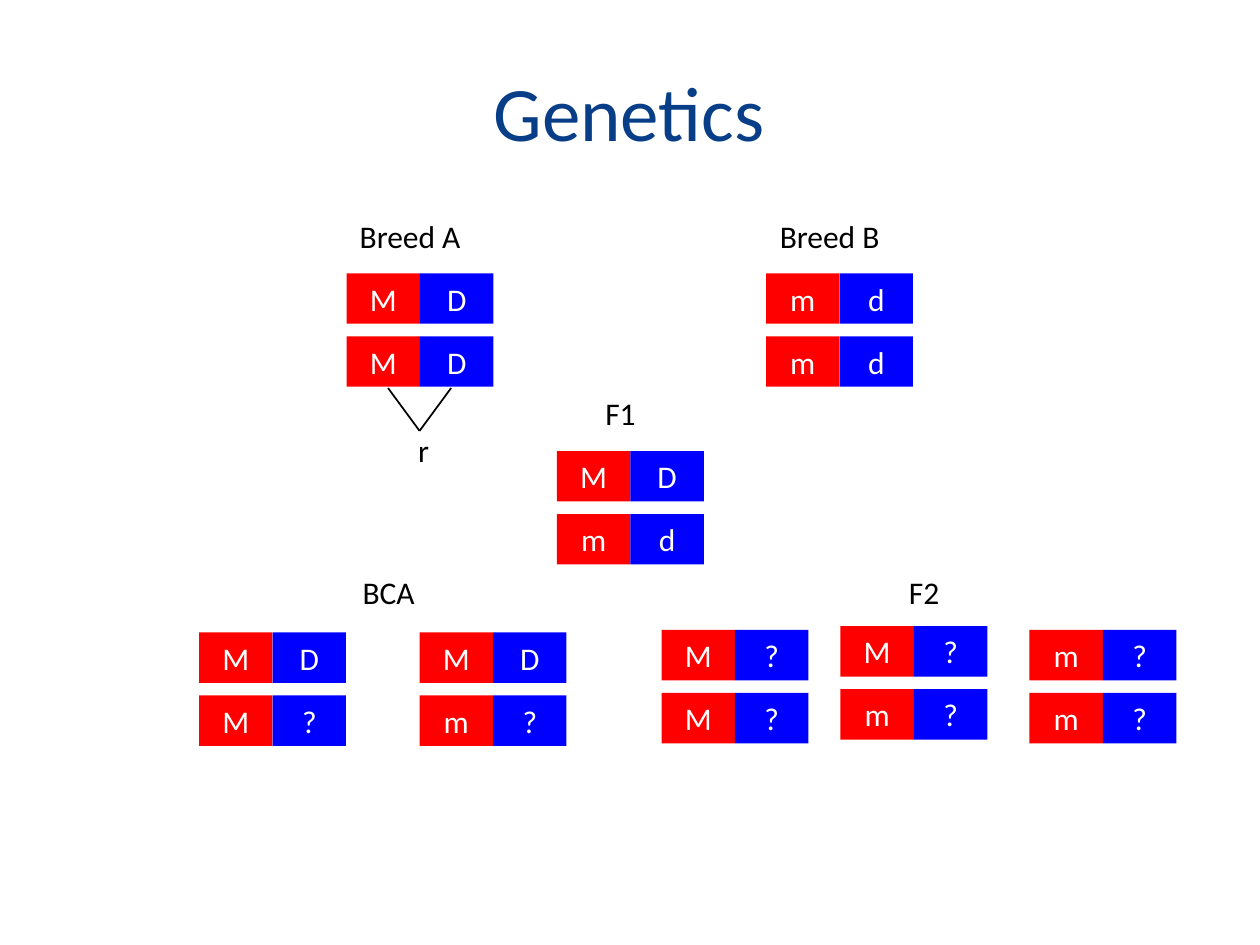
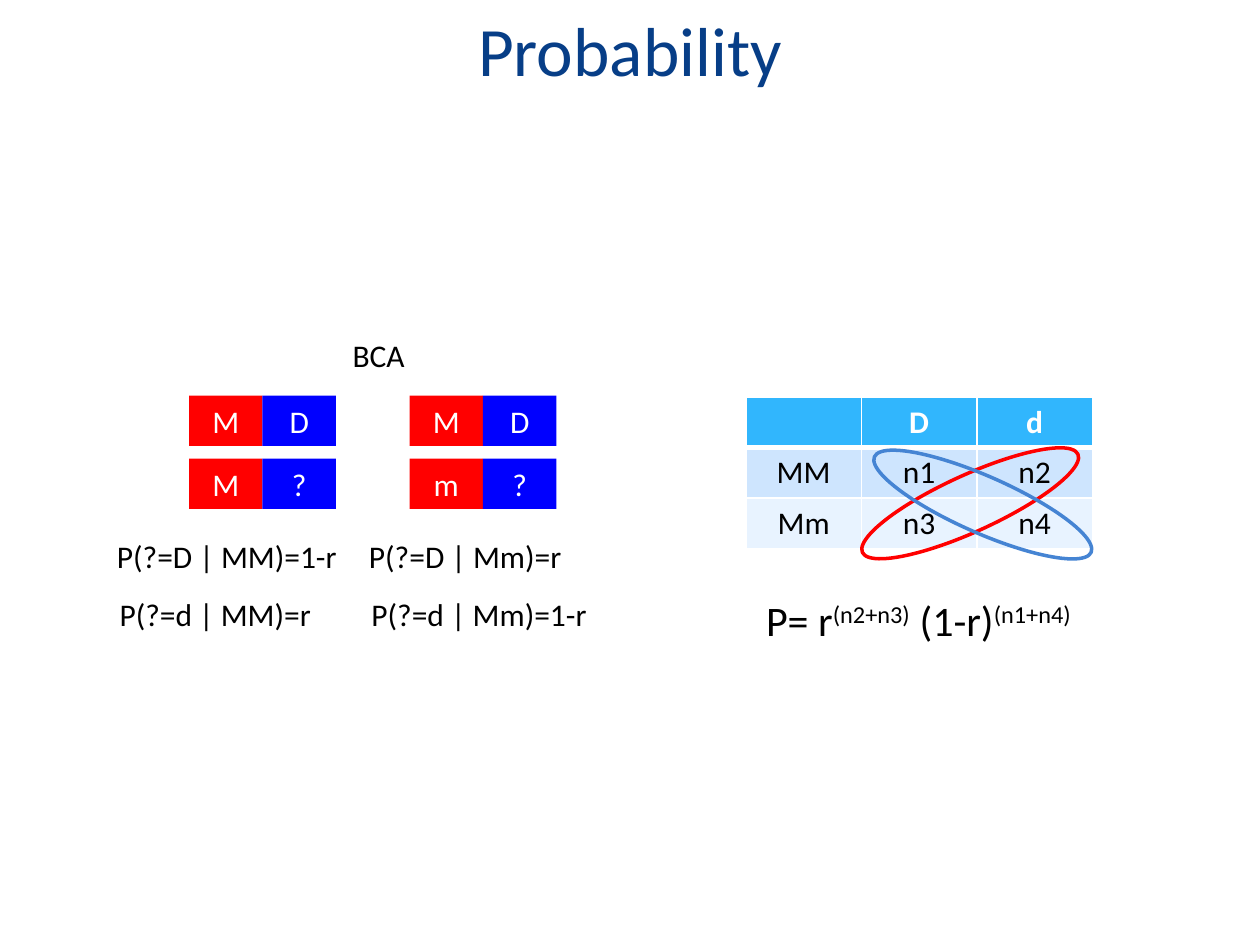
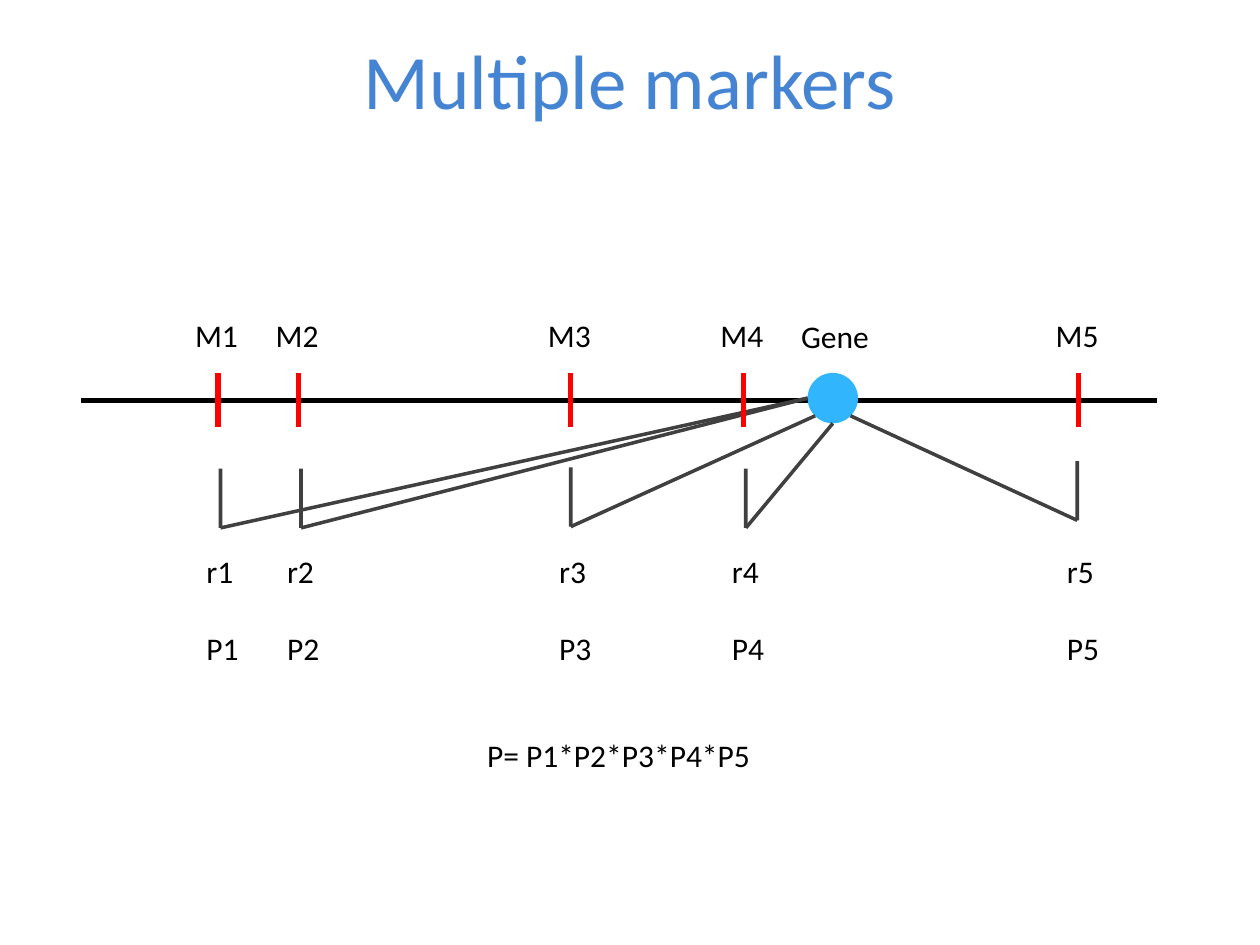
from lxml.etree import SubElement
from pptx import Presentation
from pptx.dml.color import RGBColor
from pptx.enum.shapes import MSO_CONNECTOR, MSO_SHAPE
from pptx.enum.text import MSO_ANCHOR, PP_ALIGN
from pptx.oxml.ns import qn
from pptx.util import Inches, Pt

FONT = "Calibri"
NAVY = RGBColor(0x07, 0x3E, 0x87)
STEEL = RGBColor(0x45, 0x84, 0xD3)
SKY = RGBColor(0x31, 0xB6, 0xFD)
PALE = RGBColor(0xCE, 0xE5, 0xFE)
PALEST = RGBColor(0xE8, 0xF3, 0xFF)
RED = RGBColor(0xFF, 0x00, 0x00)
BLUE = RGBColor(0x00, 0x00, 0xFF)
GREY = RGBColor(0x40, 0x40, 0x40)
BLACK = RGBColor(0x00, 0x00, 0x00)
WHITE = RGBColor(0xFF, 0xFF, 0xFF)

ALLELE_WIDTH, ALLELE_HEIGHT = 0.583, 0.4
STRAND_STEP = 0.5
LABEL_WIDTH = 1.17


# Shared helpers
def style(para, size=18, color=BLACK, align=PP_ALIGN.LEFT, bold=False):
    para.alignment = align
    font = para.font
    font.name, font.size, font.bold = FONT, Pt(size), bold
    font.color.rgb = color


def add_text(page, text, left, top, width, height=0.4, wrap=True, **look):
    box = page.shapes.add_textbox(Inches(left), Inches(top), Inches(width), Inches(height))
    box.text_frame.word_wrap = wrap
    para = box.text_frame.paragraphs[0]
    para.text = text
    style(para, **look)
    return box


def add_title(page, text, left, top, width, height, size=44, color=NAVY):
    box = add_text(page, text, left, top, width, height,
                   size=size, color=color, align=PP_ALIGN.CENTER)
    box.text_frame.vertical_anchor = MSO_ANCHOR.MIDDLE


def add_label(page, text, left, top):
    add_text(page, text, left, top, LABEL_WIDTH, align=PP_ALIGN.CENTER)


def add_line(page, start, end, color, width):
    ends = [Inches(value) for value in (*start, *end)]
    line = page.shapes.add_connector(MSO_CONNECTOR.STRAIGHT, *ends)
    line.line.color.rgb = color
    line.line.width = Pt(width)
    SubElement(line._element.spPr, qn("a:effectLst"))


def add_filled(page, kind, left, top, width, height, color):
    shape = page.shapes.add_shape(kind, Inches(left), Inches(top), Inches(width), Inches(height))
    shape.shadow.inherit = False
    shape.fill.solid()
    shape.fill.fore_color.rgb = color
    shape.line.fill.background()
    return shape


# Genotypes: two strands, each with a marker allele and a gene allele
def add_genotype(page, left, top, strands):
    for row, strand in enumerate(strands):
        for column, (allele, color) in enumerate(zip(strand, (RED, BLUE))):
            box = add_filled(page, MSO_SHAPE.RECTANGLE, left + column * ALLELE_WIDTH,
                             top + row * STRAND_STEP, ALLELE_WIDTH, ALLELE_HEIGHT, color)
            frame = box.text_frame
            frame.vertical_anchor = MSO_ANCHOR.TOP
            frame.paragraphs[0].text = allele
            style(frame.paragraphs[0], color=WHITE, align=PP_ALIGN.CENTER)


def add_population(page, name, left, top, strands):
    add_label(page, name, left - 0.08, top - 0.5)
    add_genotype(page, left, top, strands)


def add_backcross(page, left, top):
    add_label(page, "BCA", left + 0.92, top - 0.52)
    add_genotype(page, left, top, ("MD", "M?"))
    add_genotype(page, left + 1.75, top, ("MD", "m?"))


def add_second_generation(page, left, top):
    add_label(page, "F2", left + 1.5, top - 0.5)
    add_genotype(page, left, top, ("M?", "M?"))
    add_genotype(page, left + 1.42, top - 0.03, ("M?", "m?"))
    add_genotype(page, left + 2.92, top, ("m?", "m?"))


def add_recombination(page, left, top):
    tip = (left + 0.25, top + 0.34)
    for start in (left, left + 0.5):
        add_line(page, (start, top), tip, BLACK, 1)
    add_text(page, "r", left + 0.14, top + 0.29, 0.28, wrap=False)


# Count table
def add_cell_borders(cell, bottom):
    properties = cell._tc.get_or_add_tcPr()
    widths = {"a:lnL": 1, "a:lnR": 1, "a:lnT": 1, "a:lnB": bottom}
    for position, (tag, width) in enumerate(widths.items()):
        border = SubElement(properties, qn(tag), w=str(Pt(width)))
        fill = SubElement(border, qn("a:solidFill"))
        SubElement(fill, qn("a:srgbClr"), val=str(WHITE))
        properties.insert(position, border)


def add_count_table(page, left, top):
    rows = (("", "D", "d"), ("MM", "n1", "n2"), ("Mm", "n3", "n4"))
    table = page.shapes.add_table(3, 3, Inches(left), Inches(top),
                                  Inches(2.75), Inches(1.2)).table
    for row, (texts, color) in enumerate(zip(rows, (SKY, PALE, PALEST))):
        header = row == 0
        for column, text in enumerate(texts):
            cell = table.cell(row, column)
            cell.vertical_anchor = MSO_ANCHOR.MIDDLE
            cell.fill.solid()
            cell.fill.fore_color.rgb = color
            add_cell_borders(cell, 3 if header else 1)
            para = cell.text_frame.paragraphs[0]
            para.text = text
            style(para, color=WHITE if header else BLACK, align=PP_ALIGN.CENTER, bold=header)
    # Rings around the recombinant and the parental counts
    for x, y, angle, color in ((0.84, 0.62, 335.5, RED), (0.94, 0.63, 23.8, STEEL)):
        ring = add_filled(page, MSO_SHAPE.OVAL, left + x, top + y, 1.88, 0.45, color)
        ring.fill.background()
        ring.line.color.rgb = color
        ring.line.width = Pt(2)
        ring.rotation = angle


def add_likelihood(page, left, top):
    box = add_text(page, "", left, top, 3.5, 0.5, size=24, align=PP_ALIGN.CENTER)
    para = box.text_frame.paragraphs[0]
    for text, raised in (("P= r", False), ("(n2+n3)", True), (" (1-r)", False), ("(n1+n4)", True)):
        span = para.add_run()
        span.text = text
        if raised:
            span._r.get_or_add_rPr().set("baseline", "30000")


def add_conditionals(page, left, top):
    formulas = (("P(?=D | MM)=1-r", 0, 0, 2.07), ("P(?=d | MM)=r", 0.02, 0.46, 1.81),
                ("P(?=D | Mm)=r", 2, 0, 1.85), ("P(?=d | Mm)=1-r", 2.02, 0.46, 2.03))
    for text, x, y, width in formulas:
        add_text(page, text, left + x, top + y, width, wrap=False)


# Chromosome with five markers and one gene
def add_chromosome(page, left, top):
    add_line(page, (left, top), (left + 8.54, top), BLACK, 3)
    add_filled(page, MSO_SHAPE.OVAL, left + 5.77, top - 0.22, 0.4, 0.4, SKY)
    add_text(page, "Gene", left + 5.62, top - 0.71, 0.77)
    # Marker offset, stem offset, stem foot, and point where the link meets the gene
    markers = ((1.09, 1.11, 1.01, (5.77, -0.02)), (1.73, 1.75, 1.01, (5.77, -0.02)),
               (3.89, 3.89, 1.0, (5.83, 0.12)), (5.26, 5.28, 1.01, (5.97, 0.18)),
               (7.92, 7.91, 0.95, (6.11, 0.12)))
    for number, (tick, stem, foot, (gene_x, gene_y)) in enumerate(markers, 1):
        x = left + tick
        add_line(page, (x, top + 0.21), (x, top - 0.22), RED, 3)
        add_line(page, (left + gene_x, top + gene_y), (left + stem, top + foot), GREY, 2)
        add_filled(page, MSO_SHAPE.RECTANGLE, left + stem - 0.015, top + foot - 0.47,
                   0.03, 0.47, GREY)
        for letter, dx, dy in (("M", -0.28, -0.72), ("r", -0.19, 1.15), ("P", -0.19, 1.76)):
            add_text(page, f"{letter}{number}", x + dx, top + dy, 0.56)


# Slides
def build_genetics(page):
    add_title(page, "Genetics", 0.33, 0.25, 9.33, 1.25)
    add_population(page, "Breed A", 2.75, 2.17, ("MD", "MD"))
    add_population(page, "Breed B", 6.08, 2.17, ("md", "md"))
    add_population(page, "F1", 4.42, 3.58, ("MD", "md"))
    add_recombination(page, 3.08, 3.08)
    add_backcross(page, 1.58, 5.02)
    add_second_generation(page, 5.25, 5)


def build_probability(page):
    add_title(page, "Probability", 0.5, 0, 9, 0.78, size=39.6)
    add_backcross(page, 1.5, 3.14)
    add_conditionals(page, 0.83, 4.21)
    add_count_table(page, 5.92, 3.15)
    add_likelihood(page, 5.54, 4.67)


def build_markers(page):
    add_title(page, "Multiple markers", 0.5, 0, 9, 1.25, color=STEEL)
    add_chromosome(page, 0.64, 3.18)
    add_text(page, "P= P1*P2*P3*P4*P5", 3.16, 5.79, 3.5, align=PP_ALIGN.CENTER)


def main():
    deck = Presentation()
    deck.slide_width, deck.slide_height = Inches(10), Inches(7.5)
    for build in (build_genetics, build_probability, build_markers):
        build(deck.slides.add_slide(deck.slide_layouts[6]))
    deck.save("out.pptx")


if __name__ == "__main__":
    main()
